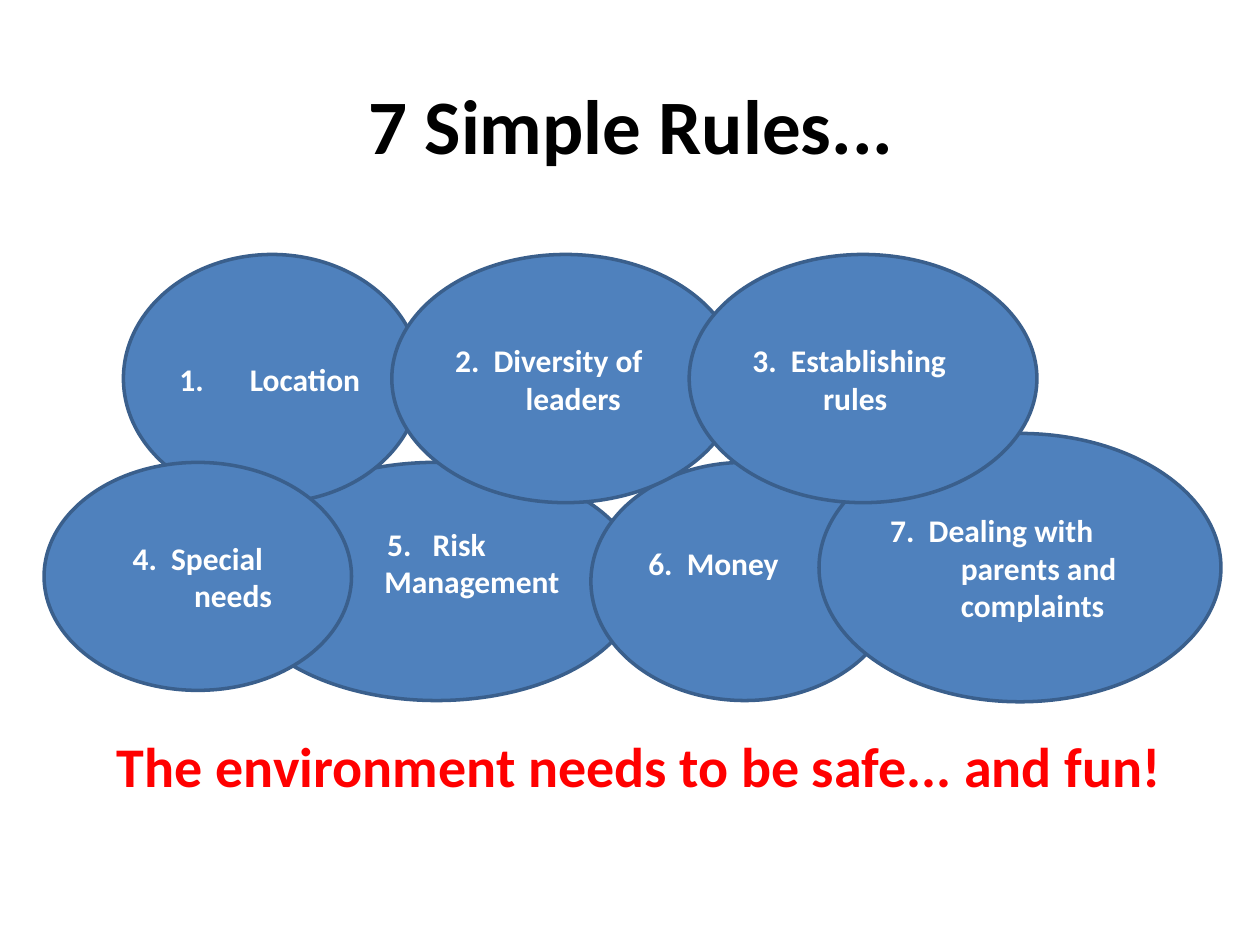
"""Builds the slide of seven rules drawn as overlapping ellipses."""
from dataclasses import dataclass
from typing import Any

from lxml.etree import SubElement
from pptx import Presentation
from pptx.dml.color import RGBColor
from pptx.enum.shapes import MSO_SHAPE
from pptx.enum.text import MSO_ANCHOR, PP_ALIGN
from pptx.oxml.ns import qn
from pptx.util import Inches, Pt

CENTER, LEFT = PP_ALIGN.CENTER, PP_ALIGN.LEFT
UPPER_ROW = {"top": 26.93, "height": 26.27}
LOWER_ROW = {"top": 48.93, "height": 25.2}


def colour(value):
    return RGBColor.from_string(value)


def assign(target, values):
    for name, value in values.items():
        setattr(target, name, value)


@dataclass
class RulesSlide:
    deck: Any
    page: Any
    font: str = "Calibri"
    fill: str = "4F81BD"
    outline: str = "3A5F8C"
    hanging: float = 0.56

    def area(self, left, top, width, height):
        across, down = self.deck.slide_width, self.deck.slide_height
        return (int(across * left / 100), int(down * top / 100),
                int(across * width / 100), int(down * height / 100))

    def add_span(self, para, text, size, shade):
        span = para.add_run()
        span.text = text
        assign(span.font, {"name": self.font, "size": Pt(size), "bold": True})
        span.font.color.rgb = colour(shade)
        return span

    def title(self, text, *shares):
        box = self.page.shapes.title
        assign(box, dict(zip(("left", "top", "width", "height"), self.area(*shares))))
        para = box.text_frame.paragraphs[0]
        para.alignment = CENTER
        self.add_span(para, text, 44, "000000")

    def message(self, text, *shares):
        box = self.page.shapes.add_textbox(*self.area(*shares))
        box.text_frame.word_wrap = True
        para = box.text_frame.paragraphs[0]
        para.alignment = CENTER
        self.add_span(para, text, 32, "FF0000")

    def rule(self, number, text, left, width, top, height,
             align=LEFT, gap=4, lift=0, listed=False):
        box = self.page.shapes.add_shape(
            MSO_SHAPE.OVAL, *self.area(left, top, width, height))
        box.shadow.inherit = False
        box.fill.solid()
        box.fill.fore_color.rgb = colour(self.fill)
        box.line.color.rgb = colour(self.outline)
        box.line.width = Pt(2)
        assign(box.text_frame, {"word_wrap": True,
                                "vertical_anchor": MSO_ANCHOR.MIDDLE,
                                "margin_bottom": Inches(0.05 + lift)})
        para = box.text_frame.paragraphs[0]
        para.alignment = align
        settings = para._p.get_or_add_pPr()
        settings.set("marL", str(Inches(self.hanging)))
        settings.set("indent", str(-Inches(self.hanging)))
        if listed:
            SubElement(settings, qn("a:buFont"), typeface="+mj-lt")
            SubElement(settings, qn("a:buAutoNum"), type="arabicPeriod")
        else:
            self.add_span(para, f"{number}.", 18, "FFFFFF")
            space = self.add_span(para, " ", 18, "FFFFFF")
            space.font._element.set("spc", str(gap * 100))
        self.add_span(para, text, 18, "FFFFFF")


deck = Presentation()
assign(deck, {"slide_width": Inches(10), "slide_height": Inches(7.5)})
slide = RulesSlide(deck, deck.slides.add_slide(deck.slide_layouts[5]))

slide.title("7 Simple Rules...", 5.1, 4.8, 90, 16.67)
slide.rule(5, "Risk Management", 18.5, 32.3, **LOWER_ROW, align=CENTER, gap=8, lift=0.3)
slide.message("The environment needs to be safe... and fun!", 4.3, 76.8, 92.9, 15.73)
slide.rule(6, "Money", 46.9, 24.4, **LOWER_ROW, lift=0.3)
slide.rule(1, "Location", 9.8, 23.6, **UPPER_ROW, listed=True)
slide.rule(7, "Dealing with parents and complaints", 65, 31.9, 45.87, 28.4)
slide.rule(4, "Special needs", 3.5, 24.4, 48.93, 24.13, align=CENTER)
slide.rule(2, "Diversity of leaders", 31.1, 27.6, **UPPER_ROW)
slide.rule(3, "Establishing rules", 54.7, 27.6, **UPPER_ROW)

deck.save("out.pptx")
